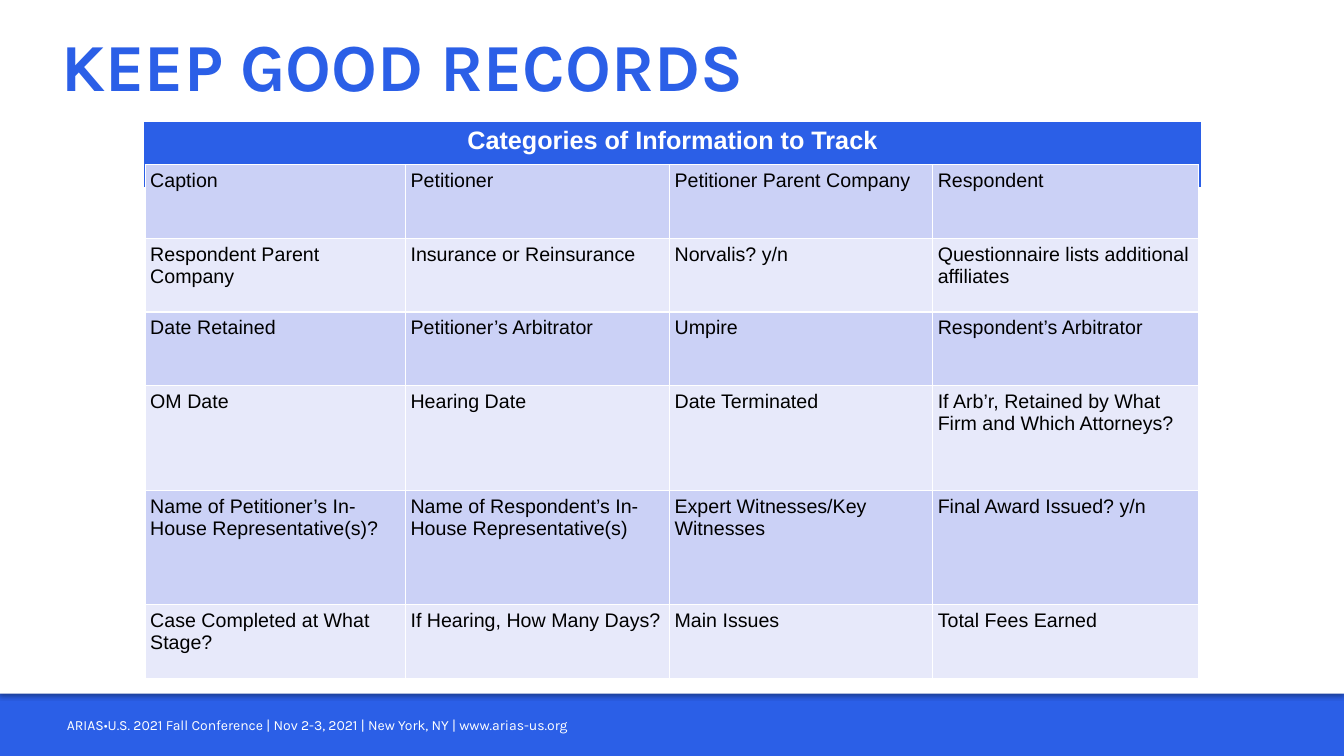
from lxml.etree import SubElement
from pptx import Presentation
from pptx.dml.color import RGBColor
from pptx.enum.shapes import MSO_SHAPE
from pptx.enum.text import MSO_ANCHOR, PP_ALIGN
from pptx.oxml import parse_xml
from pptx.oxml.ns import nsdecls, qn
from pptx.util import Pt

COLORS = {
    "blue": "2B5FE7",
    "white": "FFFFFF",
    "black": "000000",
    "odd_row": "CBD1F6",
    "even_row": "E7E9FA",
}
INSET = 3.6
SLIDE_WIDTH, SLIDE_HEIGHT = 960, 540
PANEL_HEIGHT = 495.4
COLUMN_WIDTHS = [186, 188.6, 188, 190]
ROW_HEIGHTS = [52.6, 52.6, 52.6, 75, 81.4, 52.6]
CATEGORIES = [
    ["Caption", "Petitioner", "Petitioner Parent Company", "Respondent"],
    ["Respondent Parent Company", "Insurance or Reinsurance", "Norvalis? y/n",
     "Questionnaire lists additional affiliates"],
    ["Date Retained", "Petitioner’s Arbitrator", "Umpire", "Respondent’s Arbitrator"],
    ["OM Date", "Hearing Date", "Date Terminated",
     "If Arb’r, Retained by What Firm and Which Attorneys?"],
    ["Name of Petitioner’s In-House Representative(s)?",
     "Name of Respondent’s In-House Representative(s)",
     "Expert Witnesses/Key Witnesses", "Final Award Issued? y/n"],
    ["Case Completed at What Stage?", "If Hearing, How Many Days?", "Main Issues",
     "Total Fees Earned"],
]


def rgb(name):
    """Return the named colour."""
    return RGBColor.from_string(COLORS[name])


def write(frame, text, size, color, font="Arial", bold=False, align=PP_ALIGN.LEFT):
    """Write one formatted paragraph into a text frame."""
    frame.word_wrap = True
    paragraph = frame.paragraphs[0]
    paragraph.alignment = align
    run = paragraph.add_run()
    run.text = text
    run.font.size = Pt(size)
    run.font.name = font
    run.font.bold = bold
    run.font.color.rgb = rgb(color)


def set_insets(holder):
    """Give a text frame or cell the same inset on every side."""
    holder.margin_left = holder.margin_right = Pt(INSET)
    holder.margin_top = holder.margin_bottom = Pt(INSET)


def add_backdrop(slide, height, color):
    """Add a full-width plain rectangle from the top of the slide."""
    backdrop = slide.shapes.add_shape(
        MSO_SHAPE.RECTANGLE, 0, 0, Pt(SLIDE_WIDTH), Pt(height))
    backdrop.shadow.inherit = False
    backdrop.fill.solid()
    backdrop.fill.fore_color.rgb = rgb(color)
    backdrop.line.fill.background()
    return backdrop


def add_shadow(panel):
    """Cast a soft shadow below a panel."""
    effects = panel.element.spPr.find(qn("a:effectLst"))
    effects.append(parse_xml(
        f'<a:outerShdw {nsdecls("a")} blurRad="{Pt(3)}" dist="{Pt(1.8)}" dir="5400000" '
        f'rotWithShape="0"><a:srgbClr val="{COLORS["black"]}">'
        '<a:alpha val="35000"/></a:srgbClr></a:outerShdw>'))


def add_title(slide, text):
    """Place the title above the backdrops and format it."""
    title = slide.shapes.title
    title.element.getparent().append(title.element)
    title.left, title.top, title.width, title.height = Pt(40.3), Pt(13.7), Pt(878.4), Pt(73.4)
    set_insets(title.text_frame)
    title.text_frame.vertical_anchor = MSO_ANCHOR.TOP
    write(title.text_frame, text, 48, "blue", font="Karla", bold=True)


def add_footer(slide, text):
    """Add the conference line in the bottom band."""
    footer = slide.shapes.add_textbox(Pt(44.2), Pt(508), Pt(386.6), Pt(19.4))
    set_insets(footer.text_frame)
    footer.text_frame.vertical_anchor = MSO_ANCHOR.MIDDLE
    write(footer.text_frame, text, 10, "white", font="Karla")


def add_borders(cell, bottom):
    """Draw white borders around a cell."""
    properties = cell._tc.get_or_add_tcPr()
    for position, (side, width) in enumerate(
            [("lnL", 1), ("lnR", 1), ("lnT", 1), ("lnB", bottom)]):
        line = parse_xml(f'<a:{side} {nsdecls("a")} w="{Pt(width)}"/>')
        fill = SubElement(line, qn("a:solidFill"))
        SubElement(fill, qn("a:srgbClr"), val=COLORS["white"])
        properties.insert(position, line)


def add_grid(slide, left, top, widths, heights, texts, fills, bottom=1, **text_format):
    """Add a table whose row fills cycle through the given colours."""
    table = slide.shapes.add_table(
        len(heights), len(widths), Pt(left), Pt(top),
        Pt(sum(widths)), Pt(sum(heights))).table
    for column, width in zip(table.columns, widths):
        column.width = Pt(width)
    for index, (row, height) in enumerate(zip(table.rows, heights)):
        row.height = Pt(height)
        for cell, text in zip(row.cells, texts[index]):
            set_insets(cell)
            cell.fill.solid()
            cell.fill.fore_color.rgb = rgb(fills[index % len(fills)])
            add_borders(cell, bottom)
            write(cell.text_frame, text, **text_format)


def main():
    """Build the record-keeping slide."""
    presentation = Presentation()
    presentation.slide_width, presentation.slide_height = Pt(SLIDE_WIDTH), Pt(SLIDE_HEIGHT)
    slide = presentation.slides.add_slide(presentation.slide_layouts[5])
    add_backdrop(slide, SLIDE_HEIGHT, "blue")
    add_shadow(add_backdrop(slide, PANEL_HEIGHT, "white"))
    add_footer(slide, "ARIAS•U.S. 2021 Fall Conference | Nov 2-3, 2021 | "
                      "New York, NY | www.arias-us.org")
    add_title(slide, "KEEP GOOD RECORDS")
    add_grid(slide, 102.4, 86.8, [756], [48], [["Categories of Information to Track"]],
             ["blue"], bottom=3, size=18, color="white", bold=True, align=PP_ALIGN.CENTER)
    add_grid(slide, 103.7, 117.7, COLUMN_WIDTHS, ROW_HEIGHTS, CATEGORIES,
             ["odd_row", "even_row"], size=14, color="black")
    presentation.save("out.pptx")


if __name__ == "__main__":
    main()
